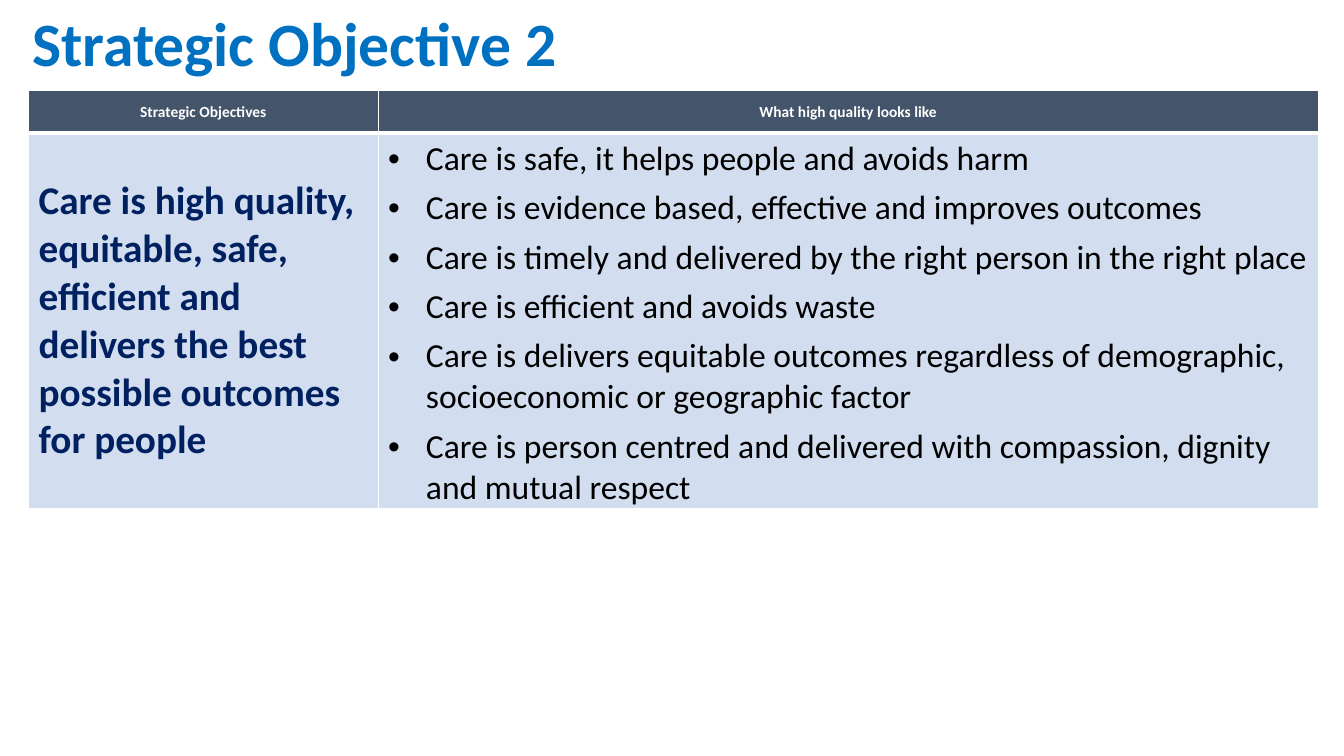
import dataclasses

import lxml.etree
import pptx
import pptx.dml.color
import pptx.enum.text
import pptx.oxml.ns
import pptx.slide
import pptx.table
import pptx.text.text
import pptx.util
from pptx.util import Cm

FONT = "Calibri"
COLOURS = {
    "title": "0070C0",
    "header": "44546A",
    "body": "D2DEEF",
    "objective": "002060",
    "bullet": "000000",
    "white": "FFFFFF",
}
COLUMN_WIDTHS = (Cm(8.81), Cm(23.69))
ROW_HEIGHTS = (Cm(1.09), Cm(9.45))
BULLET_INDENT = Cm(0.95)
ALIGN = pptx.enum.text.PP_ALIGN
ANCHOR = pptx.enum.text.MSO_ANCHOR


@dataclasses.dataclass(frozen=True)
class CellContent:
    lines: tuple[str, ...]
    fill: str
    colour: str
    size: int
    bold: bool = True
    alignment: ALIGN = ALIGN.LEFT
    anchor: ANCHOR = ANCHOR.MIDDLE
    bulleted: bool = False


def header_content(text: str) -> CellContent:
    return CellContent((text,), "header", "white", 11, alignment=ALIGN.CENTER)


TABLE_ROWS = (
    (header_content("Strategic Objectives"), header_content("What high quality looks like")),
    (
        CellContent(
            (
                "Care is high quality, equitable, safe, efficient and "
                "delivers the best possible outcomes for people",
            ),
            "body", "objective", 28,
        ),
        CellContent(
            (
                "Care is safe, it helps people and avoids harm",
                "Care is evidence based, effective and improves outcomes",
                "Care is timely and delivered by the right person in the right place",
                "Care is efficient and avoids waste",
                "Care is delivers equitable outcomes regardless of demographic, "
                "socioeconomic or geographic factor",
                "Care is person centred and delivered with compassion, dignity "
                "and mutual respect",
            ),
            "body", "bullet", 24, bold=False, anchor=ANCHOR.TOP, bulleted=True,
        ),
    ),
)


def colour(name: str) -> pptx.dml.color.RGBColor:
    return pptx.dml.color.RGBColor.from_string(COLOURS[name])


def write_paragraph(
    paragraph: pptx.text.text._Paragraph, text: str, size: int, colour_name: str,
    bold: bool, alignment: ALIGN,
) -> None:
    paragraph.alignment = alignment
    run = paragraph.add_run()
    run.text = text
    font_format = {"name": FONT, "size": pptx.util.Pt(size), "bold": bold}
    for attribute, value in font_format.items():
        setattr(run.font, attribute, value)
    run.font.color.rgb = colour(colour_name)


def add_bullet(paragraph: pptx.text.text._Paragraph) -> None:
    paragraph.space_after = pptx.util.Pt(6)
    properties = paragraph._p.get_or_add_pPr()
    properties.set("marL", str(BULLET_INDENT))
    properties.set("indent", str(-BULLET_INDENT))
    qualified = pptx.oxml.ns.qn
    lxml.etree.SubElement(properties, qualified("a:buFont"), typeface="Arial")
    lxml.etree.SubElement(properties, qualified("a:buChar"), char="•")


def add_borders(cell: pptx.table._Cell, widths: dict[str, int]) -> None:
    """Draw white borders; widths maps the sides L, R, T and B to points."""
    properties = cell._tc.get_or_add_tcPr()
    qualified = pptx.oxml.ns.qn
    for position, (side, width) in enumerate(widths.items()):
        line = lxml.etree.Element(qualified(f"a:ln{side}"), w=str(pptx.util.Pt(width)))
        fill = lxml.etree.SubElement(line, qualified("a:solidFill"))
        lxml.etree.SubElement(fill, qualified("a:srgbClr"), val=COLOURS["white"])
        properties.insert(position, line)


def fill_cell(cell: pptx.table._Cell, content: CellContent) -> None:
    cell.fill.solid()
    cell.fill.fore_color.rgb = colour(content.fill)
    cell.vertical_anchor = content.anchor
    for index, line in enumerate(content.lines):
        text_frame = cell.text_frame
        paragraph = text_frame.add_paragraph() if index else text_frame.paragraphs[0]
        write_paragraph(
            paragraph, line, content.size, content.colour, content.bold, content.alignment
        )
        if content.bulleted:
            add_bullet(paragraph)


def add_objectives_table(slide: pptx.slide.Slide) -> None:
    table = slide.shapes.add_table(
        len(ROW_HEIGHTS), len(COLUMN_WIDTHS), Cm(0.72), Cm(2.27),
        sum(COLUMN_WIDTHS), sum(ROW_HEIGHTS),
    ).table
    table.horz_banding = False
    for column, width in zip(table.columns, COLUMN_WIDTHS):
        column.width = width
    for row_index, (row, height) in enumerate(zip(table.rows, ROW_HEIGHTS)):
        row.height = height
        is_header = row_index == 0
        widths = {"L": 1, "R": 1, "T": 1 if is_header else 3, "B": 3 if is_header else 1}
        for cell, content in zip(row.cells, TABLE_ROWS[row_index]):
            fill_cell(cell, content)
            add_borders(cell, widths)


def format_title(slide: pptx.slide.Slide) -> None:
    title = slide.shapes.title
    place = {"left": Cm(0.56), "top": Cm(0), "width": Cm(13.87), "height": Cm(2.13)}
    for attribute, value in place.items():
        setattr(title, attribute, value)
    frame_format = {
        "word_wrap": False,
        "auto_size": pptx.enum.text.MSO_AUTO_SIZE.SHAPE_TO_FIT_TEXT,
        "vertical_anchor": ANCHOR.TOP,
    }
    for attribute, value in frame_format.items():
        setattr(title.text_frame, attribute, value)
    write_paragraph(
        title.text_frame.paragraphs[0], "Strategic Objective 2", 44, "title", True, ALIGN.LEFT
    )


def main() -> None:
    presentation = pptx.Presentation()
    presentation.slide_width = Cm(33.87)
    presentation.slide_height = Cm(19.05)
    slide = presentation.slides.add_slide(presentation.slide_layouts.get_by_name("Title Only"))
    add_objectives_table(slide)
    format_title(slide)
    presentation.save("out.pptx")


if __name__ == "__main__":
    main()
